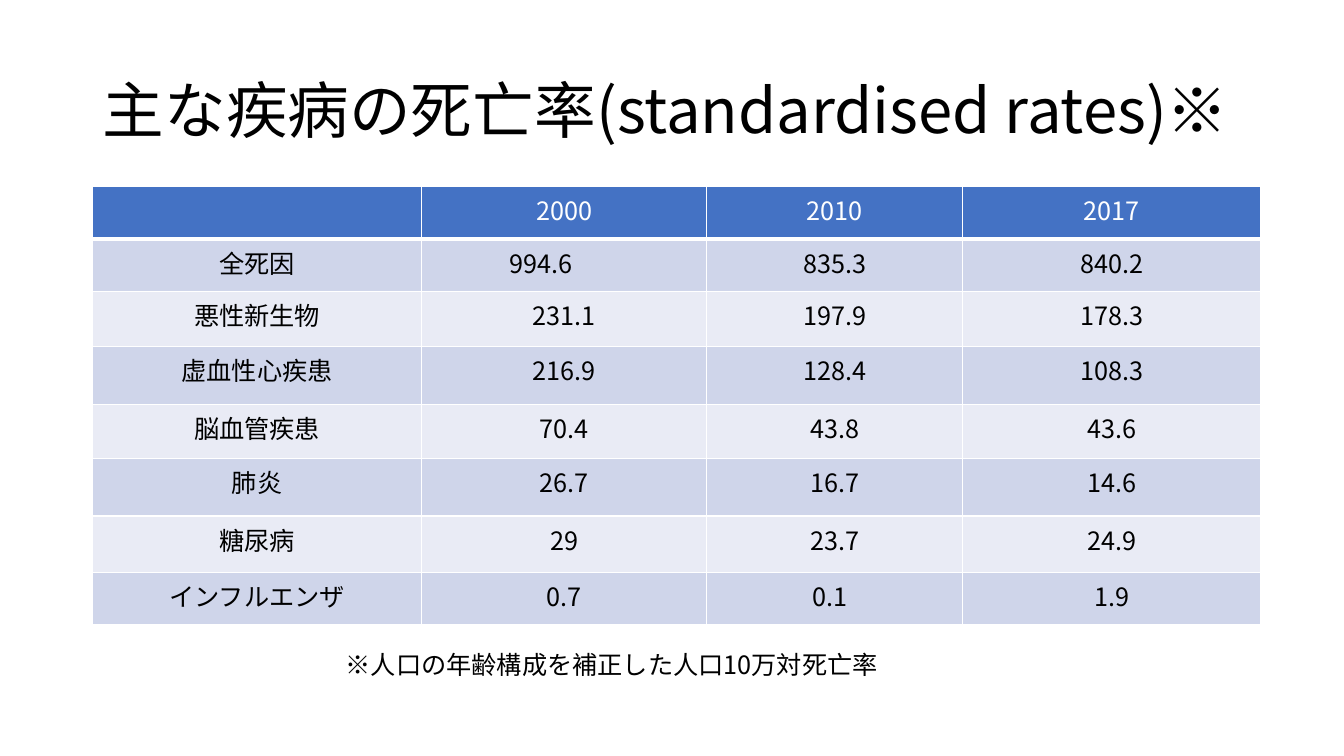
from lxml import etree
from pptx import Presentation
from pptx import util as u
from pptx.dml.color import RGBColor
from pptx.enum import text as t
from pptx.oxml import ns

PX = 9144
FONT = "Noto Sans CJK JP"
BLACK = RGBColor(0x00, 0x00, 0x00)
WHITE = RGBColor(0xFF, 0xFF, 0xFF)
BLUE = RGBColor(0x44, 0x72, 0xC4)
DARK = RGBColor(0xCF, 0xD5, 0xEA)
PALE = RGBColor(0xE9, 0xEB, 0xF5)

COLS = [326, 283, 254, 295]
ROWS = [52, 52, 55, 57, 54, 57, 56, 52]
RATES = [
    ["", "2000", "2010", "2017"],
    ["全死因", "994.6", "835.3", "840.2"],
    ["悪性新生物", "231.1", "197.9", "178.3"],
    ["虚血性心疾患", "216.9", "128.4", "108.3"],
    ["脳血管疾患", "70.4", "43.8", "43.6"],
    ["肺炎", "26.7", "16.7", "14.6"],
    ["糖尿病", "29", "23.7", "24.9"],
    ["インフルエンザ", "0.7", "0.1", "1.9"],
]
INSETS = {(1, 1): 56, (7, 2): 20}


def px(n):
    return u.Emu(n * PX)


def write(frame, words, size=18, color=BLACK, align=t.PP_ALIGN.LEFT, lead=None):
    para = frame.paragraphs[0]
    para.alignment = align
    if lead:
        para.line_spacing = lead
    run = para.add_run()
    run.text = words
    font = run.font
    font.size = u.Pt(size)
    font.name = FONT
    font.bold = False
    font.color.rgb = color
    east = etree.SubElement(font._element, ns.qn("a:ea"))
    east.set("typeface", FONT)


def edge(cell, low):
    props = cell._tc.get_or_add_tcPr()
    for i, (side, width) in enumerate([("L", 1), ("R", 1), ("T", 1), ("B", low)]):
        line = etree.Element(ns.qn("a:ln" + side), w=str(u.Pt(width)))
        fill = etree.SubElement(line, ns.qn("a:solidFill"))
        etree.SubElement(fill, ns.qn("a:srgbClr"), val=str(WHITE))
        props.insert(i, line)


def head(slide, x, y, w, h):
    title = slide.shapes.title
    title.left, title.top, title.width, title.height = map(px, (x, y, w, h))
    frame = title.text_frame
    frame.word_wrap = True
    frame.auto_size = t.MSO_AUTO_SIZE.NONE
    frame.vertical_anchor = t.MSO_ANCHOR.MIDDLE
    write(frame, "主な疾病の死亡率(standardised rates)※", size=44, lead=0.9)


def grid(slide, x, y, w, h):
    box = map(px, (x, y, w, h))
    table = slide.shapes.add_table(len(ROWS), len(COLS), *box).table
    for col, wide in zip(table.columns, COLS):
        col.width = px(wide)
    for r, (row, tall) in enumerate(zip(table.rows, ROWS)):
        row.height = px(tall)
        for c, words in enumerate(RATES[r]):
            cell = table.cell(r, c)
            cell.fill.solid()
            cell.fill.fore_color.rgb = BLUE if r == 0 else DARK if r % 2 else PALE
            edge(cell, 1 if r else 3)
            cell.margin_right = px(INSETS.get((r, c), 10))
            if words:
                write(cell.text_frame, words, color=BLACK if r else WHITE,
                      align=t.PP_ALIGN.CENTER)


def note(slide, x, y, w, h):
    frame = slide.shapes.add_textbox(*map(px, (x, y, w, h))).text_frame
    frame.word_wrap = True
    frame.auto_size = t.MSO_AUTO_SIZE.SHAPE_TO_FIT_TEXT
    write(frame, "※人口の年齢構成を補正した人口10万対死亡率")


def main():
    deck = Presentation()
    deck.slide_width, deck.slide_height = px(1333), px(750)
    slide = deck.slides.add_slide(deck.slide_layouts[5])
    head(slide, 92, 40, 1150, 145)
    grid(slide, 92, 185, sum(COLS), sum(ROWS))
    note(slide, 333, 639, 667, 40)
    deck.save("out.pptx")


if __name__ == "__main__":
    main()
